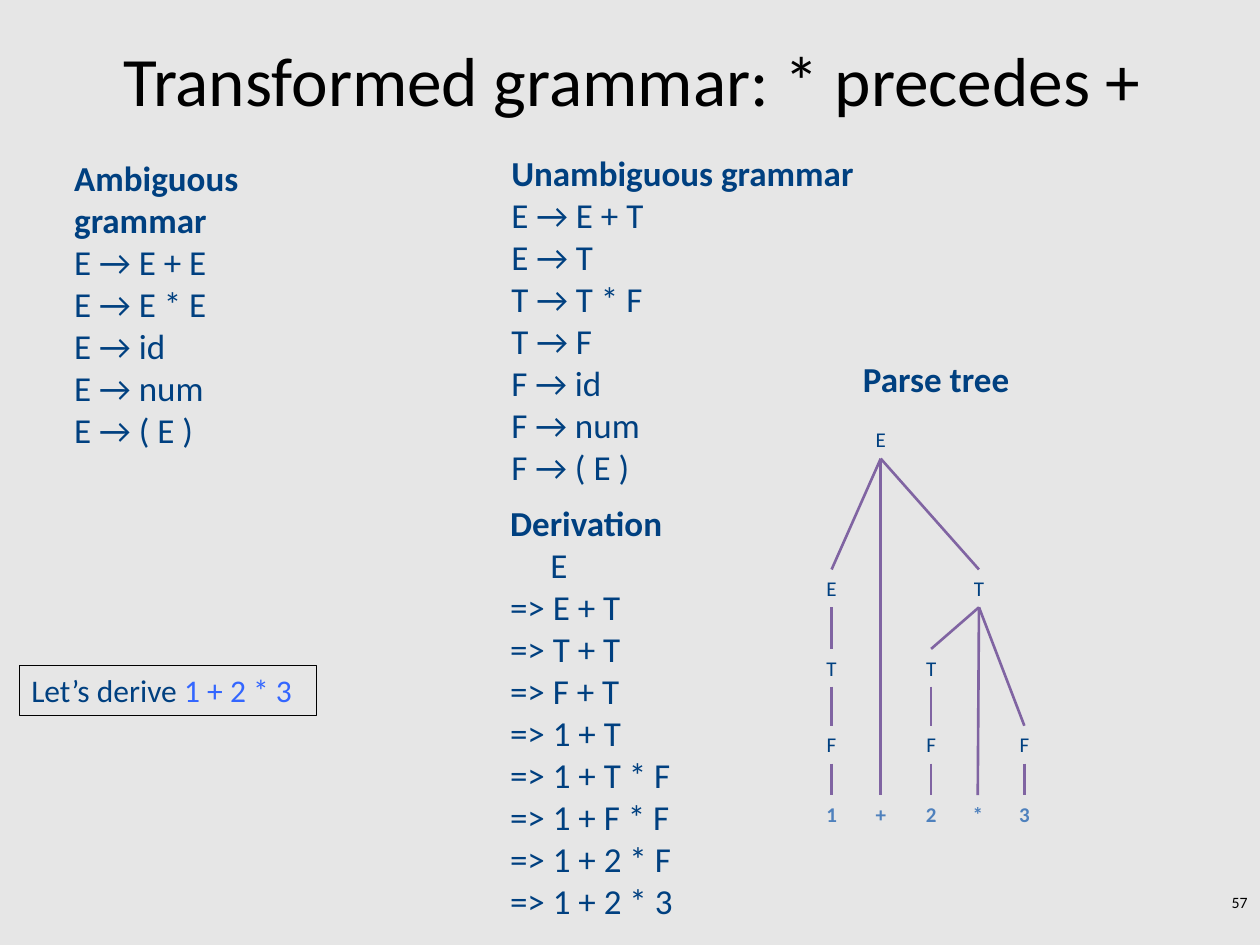
from lxml import etree
from pptx import Presentation
from pptx import util as u
from pptx.dml.color import RGBColor
from pptx.enum import shapes, text
from pptx.oxml.ns import qn


def color(value):
    return RGBColor.from_string(value)


def write(box, lines, size=20, fill="004080", bold=False, heading=False,
          align=text.PP_ALIGN.LEFT, anchor=text.MSO_ANCHOR.TOP, wrap=True):
    frame = box.text_frame
    frame.word_wrap = wrap
    frame.vertical_anchor = anchor
    for index, line in enumerate(lines):
        para = frame.paragraphs[0] if index == 0 else frame.add_paragraph()
        para.alignment = align
        for words, shade in [(line, fill)] if isinstance(line, str) else line:
            span = para.add_run()
            span.text = words
            span.font.name = "Calibri"
            span.font.size = u.Pt(size)
            span.font.bold = bold or (heading and index == 0)
            span.font.color.rgb = color(shade)
    return frame


deck = Presentation()
deck.slide_width = u.Inches(10)
deck.slide_height = u.Inches(7.5)
page = deck.slides.add_slide(deck.slide_layouts[6])
page.background.fill.solid()
page.background.fill.fore_color.rgb = color("E6E6E6")

title = page.shapes.add_textbox(u.Inches(0.77), u.Inches(0), u.Inches(8.5), u.Inches(1.25))
write(title, ["Transformed grammar: * precedes +"], size=39.6, fill="000000",
      align=text.PP_ALIGN.CENTER, anchor=text.MSO_ANCHOR.MIDDLE)

ambiguous = ["Ambiguous grammar", "E → E + E", "E → E * E", "E → id", "E → num", "E → ( E )"]
unambiguous = ["Unambiguous grammar", "E → E + T", "E → T", "T → T * F", "T → F",
               "F → id", "F → num", "F → ( E )"]
derivation = ["Derivation", "E", "=> E + T", "=> T + T", "=> F + T", "=> 1 + T",
              "=> 1 + T * F", "=> 1 + F * F", "=> 1 + 2 * F", "=> 1 + 2 * 3"]
columns = [
    (0.49, 1.19, 2.55, 2.46, ambiguous),
    (3.96, 1.15, 2.99, 2.79, unambiguous),
    (3.95, 3.93, 1.83, 3.47, derivation),
    (6.75, 2.79, 1.39, 0.44, ["Parse tree"]),
]
for left, top, width, height, lines in columns:
    box = page.shapes.add_textbox(u.Inches(left), u.Inches(top), u.Inches(width), u.Inches(height))
    frame = write(box, lines, heading=True, wrap=len(lines) > 1)
    if lines is derivation:
        start = frame.paragraphs[1]._p.get_or_add_pPr()
        start.set("marL", str(u.Inches(0.32)))
        start.set("indent", "0")

node_width, node_height = 0.28, 0.3
nodes = {
    "sum": ("E", 6.99, 3.34),
    "left sum": ("E", 6.6, 4.52),
    "product": ("T", 7.77, 4.52),
    "left term": ("T", 6.6, 5.15),
    "right term": ("T", 7.39, 5.15),
    "factor 1": ("F", 6.6, 5.76),
    "factor 2": ("F", 7.39, 5.76),
    "factor 3": ("F", 8.13, 5.76),
    "1": ("1", 6.6, 6.31),
    "plus": ("+", 6.99, 6.31),
    "2": ("2", 7.39, 6.31),
    "times": ("*", 7.76, 6.31),
    "3": ("3", 8.13, 6.31),
}
children = {
    "sum": ["left sum", "plus", "product"],
    "left sum": ["left term"],
    "product": ["right term", "times", "factor 3"],
    "left term": ["factor 1"],
    "right term": ["factor 2"],
    "factor 1": ["1"],
    "factor 2": ["2"],
    "factor 3": ["3"],
}
boxes = {}
for name, (symbol, center, top) in nodes.items():
    leaf = name not in children
    box = page.shapes.add_textbox(u.Inches(center - node_width / 2), u.Inches(top),
                                  u.Inches(node_width), u.Inches(node_height))
    write(box, [symbol], size=12, fill="4F81BD" if leaf else "004080", bold=leaf,
          align=text.PP_ALIGN.CENTER, wrap=False)
    boxes[name] = box

for parent, names in children.items():
    for child in names:
        branch = page.shapes.add_connector(shapes.MSO_CONNECTOR.STRAIGHT, 0, 0, 0, 0)
        branch.begin_connect(boxes[parent], 2)
        branch.end_connect(boxes[child], 0)
        branch.line.color.rgb = color("8064A2")
        branch.line.width = u.Pt(1.5)
        etree.SubElement(branch._element.spPr, qn("a:effectLst"))

number = page.shapes.add_textbox(u.Inches(7.92), u.Inches(7.04), u.Inches(2.08), u.Inches(0.3))
write(number, ["57"], size=9, fill="000000", align=text.PP_ALIGN.RIGHT)

task = page.shapes.add_shape(shapes.MSO_SHAPE.RECTANGLE, u.Inches(0.15), u.Inches(5.28),
                             u.Inches(2.36), u.Inches(0.4))
task.shadow.inherit = False
task.fill.background()
task.line.color.rgb = color("000000")
task.line.width = u.Pt(0.25)
write(task, [[("Let’s derive ", "004080"), ("1 + 2 * 3", "3366FF")]], size=18)

deck.save("out.pptx")
